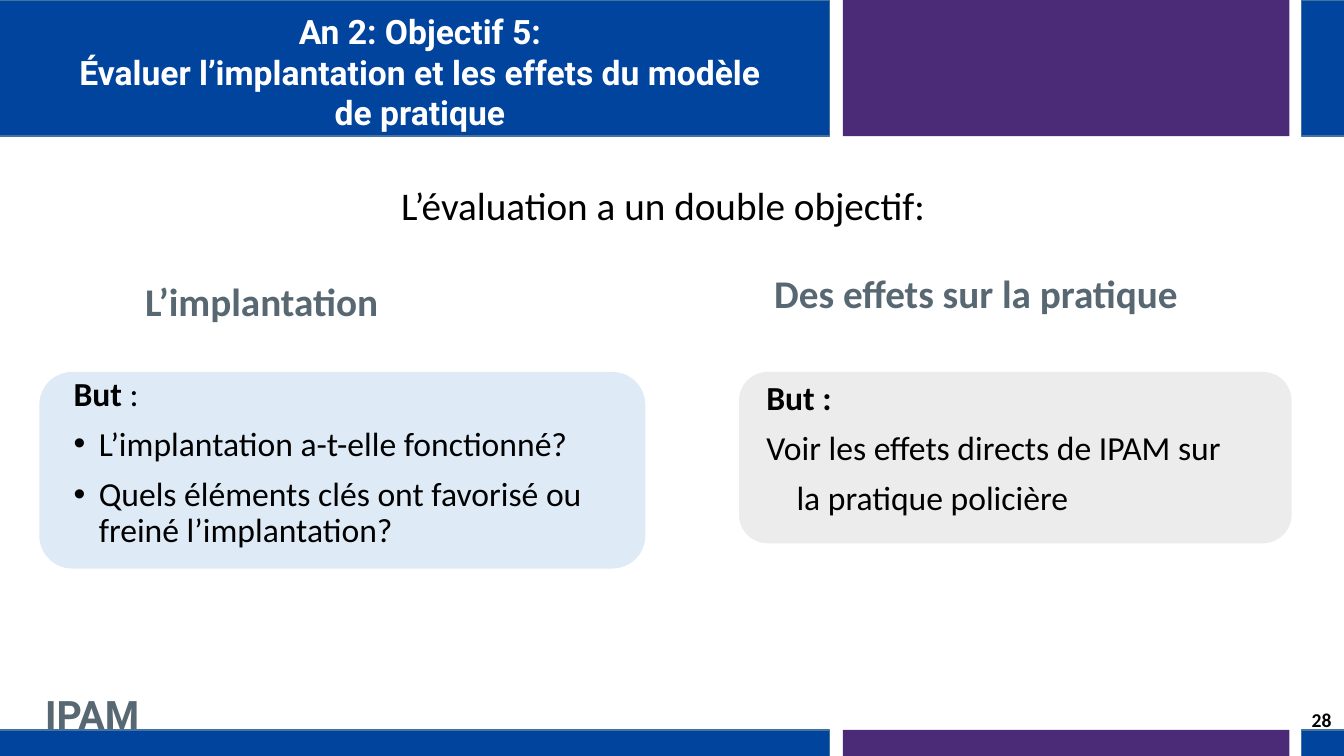
from lxml.etree import SubElement
from pptx import Presentation
from pptx.dml.color import RGBColor
from pptx.enum.shapes import MSO_SHAPE as Shape
from pptx.enum.text import MSO_ANCHOR as Anchor, MSO_AUTO_SIZE as AutoSize, PP_ALIGN as Align
from pptx.oxml.ns import qn
from pptx.util import Inches, Pt

BLUE = RGBColor(0x00, 0x44, 0x9E)
EDGE = RGBColor(0x43, 0x73, 0x9E)
PURPLE = RGBColor(0x4B, 0x2A, 0x78)
PALE_BLUE = RGBColor(0xDE, 0xEB, 0xF7)
PALE_GREY = RGBColor(0xEC, 0xEC, 0xEC)
SLATE = RGBColor(0x58, 0x68, 0x73)
BLACK = RGBColor(0, 0, 0)
WHITE = RGBColor(255, 255, 255)

WIDTH, HEIGHT = 13.33, 7.5
BAND_ROWS = [(0, 1.35), (7.24, 0.28)]
BAND_COLUMNS = [(-0.01, 8.24, BLUE, EDGE), (8.36, 4.43, PURPLE, None), (12.91, 0.45, BLUE, EDGE)]
CARD_TOP = 3.69

TITLE = ["An 2: Objectif 5:", "Évaluer l’implantation et les effets du modèle\vde pratique"]
TITLE_PLACE = (0.18, 0.06, 7.97, 1.31)

LABELS = [
    ("IPAM", (0.35, 6.8, 1.18, 0.57), "Roboto", 28, True, SLATE),
    ("L’évaluation a un double objectif:", (3.88, 1.75, 5.46, 0.57), "Calibri", 28, False, BLACK),
    ("L’implantation", (1.34, 2.7, 2.54, 0.57), "Calibri", 28, True, SLATE),
    ("Des effets sur la pratique", (7.58, 2.62, 4.36, 0.57), "Calibri", 28, True, SLATE),
    ("28", (12.91, 6.97, 0.52, 0.34), "Calibri", 14, True, BLACK),
]

CARDS = [
    {
        "card": (0.39, CARD_TOP, 6.01, 1.95),
        "fill": PALE_BLUE,
        "body": (0.63, CARD_TOP, 5.88, 1.96),
        "heading": ("But", " :"),
        "lines": [
            ("L’implantation a-t-elle fonctionné?", 0.25, True),
            ("Quels éléments clés ont favorisé ou freiné l’implantation?", 0.25, True),
        ],
    },
    {
        "card": (7.33, CARD_TOP, 5.48, 1.7),
        "fill": PALE_GREY,
        "body": (7.5, CARD_TOP + 0.04, 4.94, 1.53),
        "heading": ("But :", ""),
        "lines": [
            ("Voir les effets directs de IPAM sur", 0, False),
            ("la pratique policière", 0.3, False),
        ],
    },
]


def add_panel(slide, kind, place, fill, edge=None):
    panel = slide.shapes.add_shape(kind, *map(Inches, place))
    panel.shadow.inherit = False
    panel.fill.solid()
    panel.fill.fore_color.rgb = fill
    if edge is None:
        panel.line.fill.background()
    else:
        panel.line.color.rgb = edge
        panel.line.width = Pt(1)


def set_font(para, name, size, bold, color):
    para.font.name = name
    para.font.size = Pt(size)
    para.font.bold = bold
    para.font.color.rgb = color


def set_bullet(para, indent, bulleted):
    properties = para._p.get_or_add_pPr()
    properties.set("marL", str(Inches(indent)))
    properties.set("indent", str(-Inches(indent) if bulleted else 0))
    if bulleted:
        bullet_font = SubElement(properties, qn("a:buFont"))
        bullet_font.set("typeface", "Arial")
        SubElement(properties, qn("a:buChar")).set("char", "•")
    else:
        SubElement(properties, qn("a:buNone"))


def place_in_front(holder, place):
    holder.left, holder.top, holder.width, holder.height = map(Inches, place)
    holder.element.getparent().append(holder.element)
    frame = holder.text_frame
    frame.word_wrap = True
    frame.auto_size = AutoSize.NONE
    frame.vertical_anchor = Anchor.TOP
    return frame


def add_label(slide, text, place, *font):
    box = slide.shapes.add_textbox(*map(Inches, place))
    box.text_frame.word_wrap = False
    para = box.text_frame.paragraphs[0]
    para.text = text
    set_font(para, *font)


def fill_title(slide):
    frame = place_in_front(slide.shapes.title, TITLE_PLACE)
    frame.text = "\n".join(TITLE)
    for para in frame.paragraphs:
        para.alignment = Align.CENTER
        set_font(para, "Roboto", 24, True, WHITE)


def fill_card(slide, holder, content):
    add_panel(slide, Shape.ROUNDED_RECTANGLE, content["card"], content["fill"])
    frame = place_in_front(holder, content["body"])
    rows = [("", 0, False)] + content["lines"]
    frame.text = "\n".join(text for text, _, _ in rows)
    for para, (_, indent, bulleted) in zip(frame.paragraphs, rows):
        para.line_spacing = 0.9
        para.space_before = Pt(10)
        set_bullet(para, indent, bulleted)
        set_font(para, "Calibri", 24, False, BLACK)
    for text, bold in zip(content["heading"], (True, False)):
        if text:
            span = frame.paragraphs[0].add_run()
            span.text = text
            span.font.bold = bold


def main():
    deck = Presentation()
    deck.slide_width, deck.slide_height = Inches(WIDTH), Inches(HEIGHT)
    slide = deck.slides.add_slide(deck.slide_layouts.get_by_name("Two Content"))
    bodies = [slide.placeholders[1], slide.placeholders[2]]
    for top, height in BAND_ROWS:
        for left, width, fill, edge in BAND_COLUMNS:
            add_panel(slide, Shape.RECTANGLE, (left, top, width, height), fill, edge)
    fill_title(slide)
    for holder, content in zip(bodies, CARDS):
        fill_card(slide, holder, content)
    for label in LABELS:
        add_label(slide, *label)
    deck.save("out.pptx")


if __name__ == "__main__":
    main()
